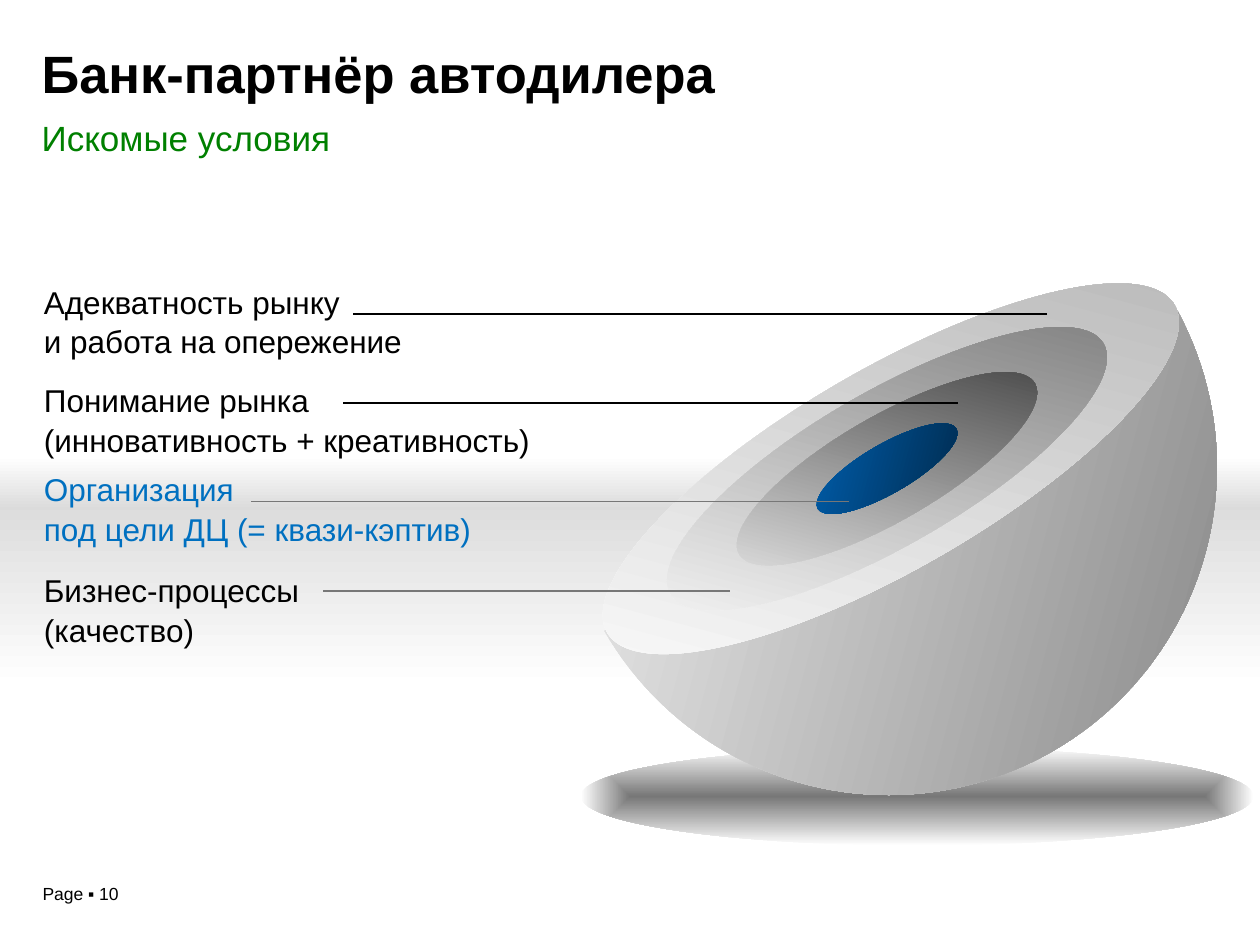
import math
from dataclasses import dataclass
from lxml import etree
from pptx import Presentation, util as u
from pptx.dml.color import RGBColor
from pptx.enum import shapes as sh, text as tx
from pptx.oxml.ns import qn

COLS, ROWS = 100, 75
CELL = u.Inches(0.1)
TILT = -30
MID = (70.4, 37.2)


@dataclass(frozen=True)
class Theme:
    face: str = "Arial"
    ink: str = "000000"
    green: str = "008000"
    blue: str = "0070C0"
    gray: str = "777777"
    white: str = "FFFFFF"
    title: int = 30
    sub: int = 20
    label: int = 18
    foot: int = 10


T = Theme()

# text lines, colour, top, width
LABELS = [
    (("Бизнес-процессы", "(качество)"), T.ink, 44.7, 22.3),
    (("Организация", "под цели ДЦ (= квази-кэптив)"), T.blue, 36.7, 36.1),
    (("Понимание рынка", "(инновативность + креативность)"), T.ink, 29.6, 40.8),
    (("Адекватность рынку", "и работа на опережение"), T.ink, 21.8, 30.5),
]

# centre, width, height, colours
RINGS = [
    ((70.7, 37.2), 52, 15.9, (T.white, "B4B4B4")),
    (MID, 39.7, 12.2, (T.white, "767676")),
    (MID, 27.1, 8.3, ("EAEAEA", "3D3D3D")),
]


def grid(*vals):
    return [round(v * CELL) for v in vals]


def shade(shape, pair, turn):
    """Fill with two colours; turn is clockwise degrees, None runs from the centre out."""
    shape.shadow.inherit = False
    shape.line.fill.background()
    fill = shape.fill
    fill.gradient()
    for stop, tint in zip(fill.gradient_stops, pair):
        stop.color.rgb = RGBColor.from_string(tint)
    if turn is not None:
        fill.gradient_angle = -turn % 360
        return
    lin = shape.element.spPr.find(".//" + qn("a:lin"))
    ring = etree.Element(qn("a:path"), {"path": "shape"})
    etree.SubElement(ring, qn("a:fillToRect"), dict.fromkeys("ltrb", "50000"))
    lin.getparent().replace(lin, ring)


def block(slide, kind, box, pair, turn):
    shape = slide.shapes.add_shape(kind, *grid(*box))
    shade(shape, pair, turn)
    return shape


def disc(slide, mid, wide, high, pair, turn):
    box = (mid[0] - wide / 2, mid[1] - high / 2, wide, high)
    block(slide, sh.MSO_SHAPE.OVAL, box, pair, turn).rotation = TILT


def bowl(slide):
    """Half circle below a flat rim, tilted like the discs."""
    left, top, rad = 51, 35.3, 26.05
    arc = [math.pi * i / 90 for i in range(91)]
    dots = [grid(left + rad + rad * math.cos(a), top + rad * math.sin(a)) for a in arc]
    path = slide.shapes.build_freeform(*dots[0])
    path.add_line_segments(dots[1:], close=True)
    shape = path.convert_to_shape()
    shape.rotation = TILT
    shade(shape, ("E9E9E9", T.gray), 45)


def rule(slide, x1, x2, y, tint):
    line = slide.shapes.add_connector(sh.MSO_CONNECTOR.STRAIGHT, *grid(x1, y, x2, y))
    line.line.color.rgb = RGBColor.from_string(tint)
    line.line.width = u.Pt(1)
    etree.SubElement(line.element.spPr, qn("a:effectLst"))


def write(frame, lines, size, tint, bold=False, gap=None):
    frame.text = "\n".join(lines)
    for para in frame.paragraphs:
        para.alignment = tx.PP_ALIGN.LEFT
        para.line_spacing = gap
        font = para.font
        font.name, font.size, font.bold = T.face, u.Pt(size), bold
        font.color.rgb = RGBColor.from_string(tint)


def note(slide, box, lines, size, tint, gap=None):
    frame = slide.shapes.add_textbox(*grid(*box)).text_frame
    frame.word_wrap = False
    write(frame, lines, size, tint, gap=gap)
    return frame


def center(frame, pad):
    """Centre the text vertically, with no side margins."""
    frame.word_wrap = True
    frame.auto_size = tx.MSO_AUTO_SIZE.NONE
    frame.vertical_anchor = tx.MSO_ANCHOR.MIDDLE
    frame.margin_left = frame.margin_right = 0
    frame.margin_top = frame.margin_bottom = u.Inches(pad)


def head(slide):
    title = slide.shapes.title
    title.left, title.top, title.width, title.height = grid(3.3, 0.6, 93.2, 10.9)
    write(title.text_frame, ["Банк-партнёр автодилера"], T.title, T.ink, True, 0.9)
    center(title.text_frame, 0.05)
    sub = note(slide, (3.3, 9, 82.9, 3.9), ["Искомые условия"], T.sub, T.green)
    center(sub, 0)


def band(slide):
    rect = sh.MSO_SHAPE.RECTANGLE
    block(slide, rect, (0, 40.4, COLS, 14.2), ("DDDDDD", T.white), 90)
    block(slide, rect, (0, 36.2, COLS, 4.3), ("DBDBDB", T.white), 270)


def main():
    deck = Presentation()
    deck.slide_width, deck.slide_height = grid(COLS, ROWS)
    slide = deck.slides.add_slide(deck.slide_layouts[5])
    note(slide, (2.4, 69.6, 14.7, 2.7), ["Page ▪ 10"], T.foot, T.ink)
    band(slide)
    for lines, tint, top, wide in LABELS:
        note(slide, (2.5, top, wide, 7), lines, T.label, tint, 1.05)
    block(slide, sh.MSO_SHAPE.OVAL, (46.1, 59.3, 53.4, 7.8), (T.gray, T.white), None)
    bowl(slide)
    for ring in RINGS:
        disc(slide, *ring, 315)
    rule(slide, 76, 27.2, 32, T.ink)
    disc(slide, MID, 12.7, 3.9, ("0061B2", "002747"), 45)
    rule(slide, 57.9, 25.6, 46.9, T.gray)
    rule(slide, 67.4, 19.9, 39.8, T.gray)
    rule(slide, 83.1, 28, 24.9, T.ink)
    head(slide)
    deck.save("out.pptx")


if __name__ == "__main__":
    main()
